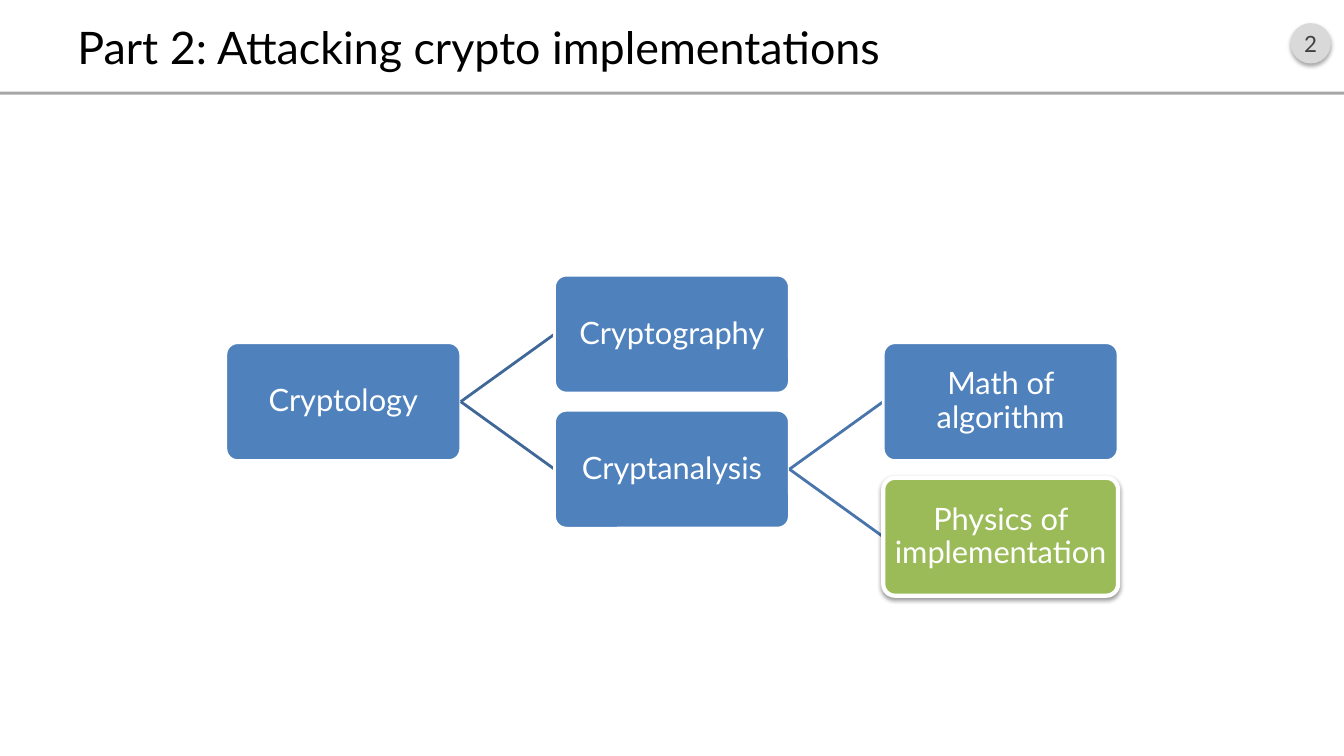
from lxml.etree import SubElement
from pptx import Presentation
from pptx.dml.color import RGBColor
from pptx.enum.shapes import MSO_CONNECTOR, MSO_SHAPE
from pptx.enum.text import MSO_ANCHOR, PP_ALIGN
from pptx.oxml.ns import qn
from pptx.util import Inches, Pt


def add_block(kind, left, top, width, height, fill=None, line=None, line_width=2,
              shadow=None, text="", size=22, color="FFFFFF", align=PP_ALIGN.CENTER,
              insets=(0, 0.05), spacing=1.0):
    """Add a shape with optional text; shadow is (opacity %, blur pt, distance pt)."""
    shape = slide.shapes.add_shape(
        kind, Inches(left), Inches(top), Inches(width), Inches(height))
    shape.shadow.inherit = False
    if fill:
        shape.fill.solid()
        shape.fill.fore_color.rgb = RGBColor.from_string(fill)
    else:
        shape.fill.background()
    if line:
        shape.line.color.rgb = RGBColor.from_string(line)
        shape.line.width = Pt(line_width)
    else:
        shape.line.fill.background()
    if shadow:
        opacity, blur, distance = shadow
        effects = shape._element.spPr.find(qn("a:effectLst"))
        outer = SubElement(effects, qn("a:outerShdw"), blurRad=str(Pt(blur)),
                           dist=str(Pt(distance)), dir="5400000", rotWithShape="0")
        shade = SubElement(outer, qn("a:srgbClr"), val="000000")
        SubElement(shade, qn("a:alpha"), val=str(opacity * 1000))
    if text:
        frame = shape.text_frame
        frame.word_wrap = True
        frame.vertical_anchor = MSO_ANCHOR.MIDDLE
        frame.margin_left = frame.margin_right = Inches(insets[0])
        frame.margin_top = frame.margin_bottom = Inches(insets[1])
        paragraph = frame.paragraphs[0]
        paragraph.alignment = align
        paragraph.line_spacing = spacing
        run = paragraph.add_run()
        run.text = text
        run.font.name = "Lato"
        run.font.size = Pt(size)
        run.font.color.rgb = RGBColor.from_string(color)
    return shape


def add_branch(start_x, start_y, end_x, end_y, color):
    branch = slide.shapes.add_connector(
        MSO_CONNECTOR.STRAIGHT, Inches(start_x), Inches(start_y),
        Inches(end_x), Inches(end_y))
    branch.line.color.rgb = RGBColor.from_string(color)
    branch.line.width = Pt(2)
    SubElement(branch._element.spPr, qn("a:effectLst"))


presentation = Presentation()
presentation.slide_width = Inches(13.33)
presentation.slide_height = Inches(7.5)
slide = presentation.slides.add_slide(presentation.slide_layouts[6])

# Header
add_block(MSO_SHAPE.OVAL, 12.8, 0.23, 0.4, 0.4, fill="D9D9D9", shadow=(35, 3.1, 1.8),
          text="2", size=16, color="404040")
add_block(MSO_SHAPE.RECTANGLE, 0, 0.91, 13.33, 0.03, fill="A6A6A6")
add_block(MSO_SHAPE.RECTANGLE, 0.67, 0.16, 12, 0.6, size=32, color="000000",
          text="Part 2: Attacking crypto implementations",
          align=PP_ALIGN.LEFT, insets=(0.1, 0.05))

# Tree: columns one step apart, rows half a box pitch apart
tree_left, tree_top = 2.24, 2.73
column_step, row_step = 3.26, 0.67
box_width, box_height = 2.33, 1.17
plain = {"fill": "4F81BD"}
highlight = {"fill": "9BBB59", "line_width": 3, "shadow": (38, 3.1, 1.6)}
branch_colors = {1: "3F6797", 2: "4875AC"}
nodes = [
    ("Cryptology", 0, 1, None, plain),
    ("Cryptography", 1, 0, "Cryptology", plain),
    ("Cryptanalysis", 1, 2, "Cryptology", plain),
    ("Math of algorithm", 2, 1, "Cryptanalysis", plain),
    ("Physics of implementation", 2, 3, "Cryptanalysis", highlight),
]
branch_starts = {}
for label, column, row, parent, style in nodes:
    left = tree_left + column * column_step
    top = tree_top + row * row_step
    middle = top + box_height / 2
    if parent:
        add_branch(*branch_starts[parent], left, middle, branch_colors[column])
    box = add_block(MSO_SHAPE.ROUNDED_RECTANGLE, left, top, box_width, box_height,
                    line="FFFFFF", text=label, insets=(0.02, 0.05), spacing=0.9, **style)
    box.adjustments[0] = 0.1
    branch_starts[label] = (left + box_width, middle)

presentation.save("out.pptx")
